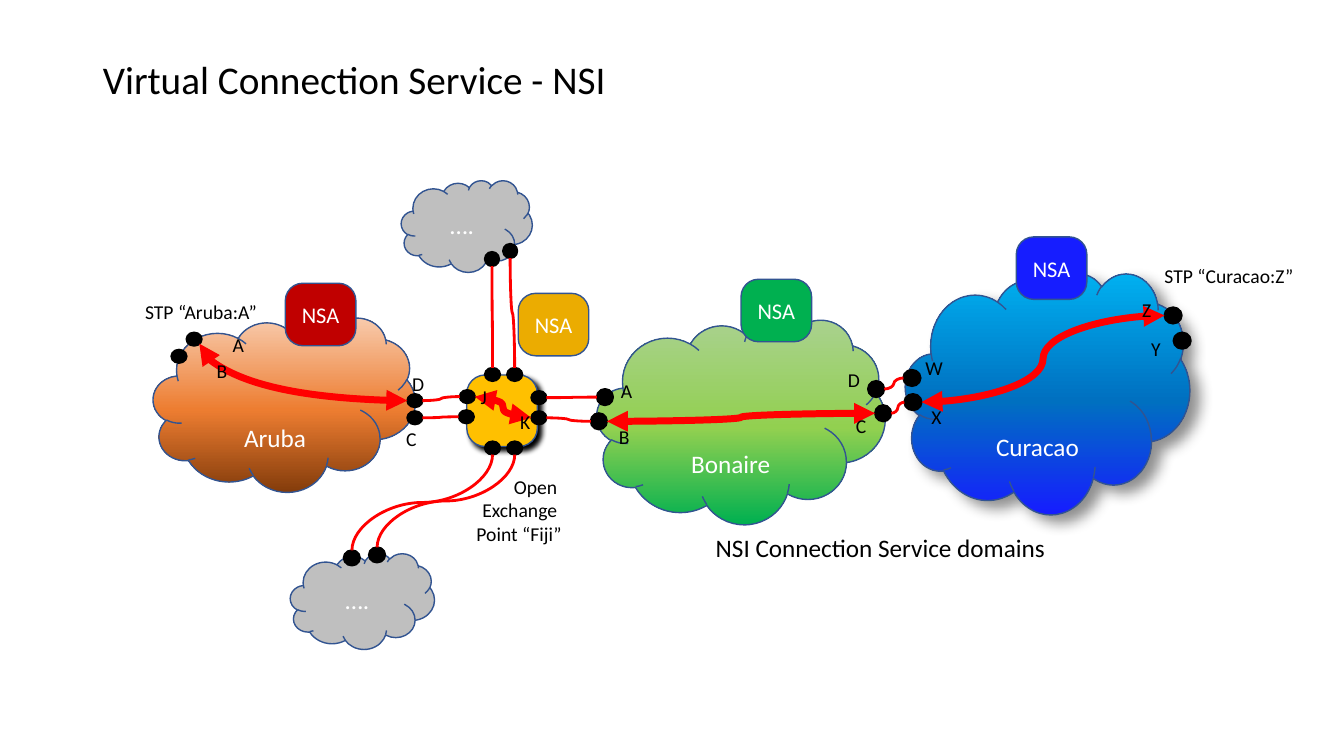
"""Build the Virtual Connection Service - NSI slide."""
import copy

import lxml.etree
import pptx
import pptx.dml.color
import pptx.enum.shapes
import pptx.enum.text
import pptx.oxml
import pptx.oxml.ns
import pptx.util

Inches, Pt = pptx.util.Inches, pptx.util.Pt
RGBColor = pptx.dml.color.RGBColor
SHAPE = pptx.enum.shapes.MSO_SHAPE
ALIGN = pptx.enum.text.PP_ALIGN
ANCHOR = pptx.enum.text.MSO_ANCHOR
qn = pptx.oxml.ns.qn

BLACK = RGBColor(0x00, 0x00, 0x00)
WHITE = RGBColor(0xFF, 0xFF, 0xFF)
RED = RGBColor(0xFF, 0x00, 0x00)
OUTLINE = RGBColor(0x32, 0x54, 0x91)
GREY = RGBColor(0xBF, 0xBF, 0xBF)
GREEN = RGBColor(0x00, 0xB0, 0x50)
LIME = RGBColor(0x92, 0xD0, 0x50)
PALE_GREEN = RGBColor(0xA9, 0xD1, 0x8E)
BLUE = RGBColor(0x16, 0x1D, 0xFF)
MID_BLUE = RGBColor(0x00, 0x70, 0xC0)
SKY = RGBColor(0x00, 0xB0, 0xF0)
BROWN = RGBColor(0x84, 0x3C, 0x0B)
ORANGE = RGBColor(0xED, 0x7D, 0x31)
PEACH = RGBColor(0xF8, 0xCB, 0xAD)
GOLD = RGBColor(0xFF, 0xC0, 0x00)
DARK_GOLD = RGBColor(0xEB, 0xAC, 0x01)
DARK_RED = RGBColor(0xC0, 0x00, 0x00)

TITLE = "Virtual Connection Service - NSI"

CLOUDS = [
    ("Bonaire", (5.92, 3.17, 2.86, 2.03), (GREEN, LIME, PALE_GREEN), None),
    ("Curacao", (8.98, 2.71, 2.82, 2.39), (BLUE, MID_BLUE, SKY), (43, 10, 8)),
    ("Aruba", (1.52, 3.15, 2.6, 1.73), (BROWN, ORANGE, PEACH), None),
    ("….", (2.88, 5.49, 1.43, 0.95), (GREY,), None),
    ("….", (3.98, 1.79, 1.3, 0.91), (GREY,), None),
]
EXCHANGE = (4.63, 3.72, 0.7, 0.71)

DOT_GROUPS = [
    ("Bonaire", (0.16, 0.16), {"B": (5.86, 4.1), "A": (5.92, 3.86),
                               "C": (8.68, 4.02), "D": (8.61, 3.78)}),
    ("Curacao", (0.17, 0.16), {"W": (8.96, 3.67), "X": (8.97, 3.91),
                               "Z": (11.55, 3.05), "Y": (11.64, 3.3)}),
    ("Aruba", (0.15, 0.13), {"A": (1.85, 3.3), "D": (4.04, 3.91),
                             "B": (1.7, 3.47), "C": (4.04, 4.08)}),
    ("South", (0.16, 0.15), {"right": (3.66, 5.43), "left": (3.41, 5.46)}),
    ("North", (0.14, 0.14), {"right": (4.99, 2.42), "left": (4.81, 2.5)}),
    ("Fiji", (0.15, 0.13), {"top left": (4.81, 3.65), "top right": (5.03, 3.65),
                            "J": (4.56, 3.87), "west": (4.55, 4.07),
                            "bottom left": (4.81, 4.38), "bottom right": (5.03, 4.38),
                            "east": (5.27, 3.88), "K": (5.27, 4.08)}),
]

SIDES = {"left": (0, 0.5), "right": (1, 0.5), "top": (0.5, 0),
         "bottom": (0.5, 1), "corner": (0.85, 0.85)}
LINKS = [
    ("Bonaire D", "right", "Curacao W", "left"),
    ("Bonaire C", "right", "Curacao X", "left"),
    ("Fiji bottom right", "bottom", "South right", "top"),
    ("Fiji bottom left", "bottom", "South left", "top"),
    ("North right", "bottom", "Fiji top right", "top"),
    ("North left", "bottom", "Fiji top left", "top"),
    ("Fiji east", "right", "Bonaire A", "left"),
    ("Fiji K", "right", "Bonaire B", "left"),
    ("Aruba D", "right", "Fiji J", "left"),
    ("Aruba C", "right", "Fiji west", "left"),
]
PATHS = [
    ("Curacao Z", "left", "Curacao X", "right"),
    ("Bonaire C", "left", "Bonaire B", "right"),
    ("Fiji K", "left", "Fiji J", "right"),
    ("Aruba D", "left", "Aruba A", "corner"),
]

LABELS = [
    ("STP “Aruba:A”", 1.34, 2.93, 1.32), ("A", 2.21, 3.25, 0.32),
    ("B", 2.05, 3.51, 0.31), ("C", 3.93, 4.19, 0.31), ("D", 3.99, 3.64, 0.32),
    ("STP “Curacao:Z”", 11.45, 2.57, 1.49), ("X", 9.14, 3.97, 0.3),
    ("Y", 11.32, 3.29, 0.3), ("Z", 11.23, 2.91, 0.29), ("W", 9.08, 3.48, 0.38),
    ("A", 6.06, 3.71, 0.32), ("B", 6.04, 4.17, 0.31), ("C", 8.39, 4.06, 0.31),
    ("D", 8.31, 3.6, 0.32), ("J", 4.67, 3.77, 0.27), ("K", 5.06, 4.02, 0.3),
]
AGENTS = [(10.08, 2.35, BLUE), (5.14, 2.91, DARK_GOLD),
          (2.83, 2.81, DARK_RED), (7.35, 2.77, GREEN)]

prs = pptx.Presentation()
prs.slide_width, prs.slide_height = Inches(13.33), Inches(7.5)
s = prs.slides.add_slide(prs.slide_layouts[5])


def write(sp, text, size=14, color=BLACK, align=ALIGN.LEFT, anchor=ANCHOR.TOP,
          wrap=True, spacing=None):
    tf = sp.text_frame
    tf.word_wrap, tf.vertical_anchor = wrap, anchor
    for i, line in enumerate(text.split("\n")):
        p = tf.add_paragraph() if i else tf.paragraphs[0]
        p.alignment, p.line_spacing = align, spacing
        r = p.add_run()
        r.text = line
        r.font.name, r.font.size, r.font.color.rgb = "Calibri", Pt(size), color


def add_text(text, box, **fmt):
    sp = s.shapes.add_textbox(*map(Inches, box))
    write(sp, text, wrap=False, **fmt)
    sp.text_frame.auto_size = pptx.enum.text.MSO_AUTO_SIZE.SHAPE_TO_FIT_TEXT


def add_shape(kind, box, colors, line=OUTLINE, weight=1, radius=None, shadow=None):
    sp = s.shapes.add_shape(kind, *map(Inches, box))
    sp.shadow.inherit = False
    if len(colors) == 1:
        sp.fill.solid()
        sp.fill.fore_color.rgb = colors[0]
    else:
        sp.fill.gradient()
        sp.fill.gradient_angle = 90
        first = sp._element.spPr.find(".//" + qn("a:gs"))
        first.addnext(copy.deepcopy(first))
        for stop, color, pos in zip(sp.fill.gradient_stops, colors, (0, 0.47, 1)):
            stop.color.rgb, stop.position = color, pos
    sp.line.color.rgb, sp.line.width = line, Pt(weight)
    if radius:
        sp.adjustments[0] = radius
    if shadow:
        alpha, blur, dist = shadow
        sp._element.spPr.find(qn("a:effectLst")).append(pptx.oxml.parse_xml(
            f'<a:outerShdw {pptx.oxml.ns.nsdecls("a")} blurRad="{Pt(blur)}" '
            f'dist="{Pt(dist)}" dir="{40 * 60000}" algn="tl" rotWithShape="0">'
            f'<a:srgbClr val="{BLACK}"><a:alpha val="{alpha * 1000}"/></a:srgbClr>'
            '</a:outerShdw>'))
    return sp


def add_curve(start, start_side, end, end_side, weight=2, arrows=False):
    (x1, y1), (x2, y2) = [
        (x + w * SIDES[side][0], y + h * SIDES[side][1])
        for (x, y, w, h), side in ((dots[start], start_side), (dots[end], end_side))]
    vertical = start_side == "bottom"
    if vertical:
        cx, cy, dx, dy = (x1 + x2) / 2, (y1 + y2) / 2, x1 - x2, y2 - y1
        x1, y1, x2, y2 = cx - dy / 2, cy - dx / 2, cx + dy / 2, cy + dx / 2
    c = s.shapes.add_connector(pptx.enum.shapes.MSO_CONNECTOR.CURVE,
                               *map(Inches, (x1, y1, x2, y2)))
    spPr = c._element.spPr
    if vertical:
        spPr.find(qn("a:xfrm")).set("rot", str(90 * 60000))
    if end_side == "corner":
        spPr.find(qn("a:prstGeom")).set("prst", "curvedConnector2")
    c.line.color.rgb, c.line.width = RED, Pt(weight)
    if arrows:
        for tag in ("a:headEnd", "a:tailEnd"):
            lxml.etree.SubElement(spPr.find(qn("a:ln")), qn(tag), type="triangle")
    lxml.etree.SubElement(spPr, qn("a:effectLst"))


title = s.shapes.title
title.left, title.top, title.width, title.height = map(Inches, (0.92, 0.4, 11.5, 0.83))
write(title, TITLE, size=28, anchor=ANCHOR.MIDDLE, spacing=0.9)

for name, box, colors, shadow in CLOUDS:
    cloud = add_shape(SHAPE.CLOUD, box, colors, shadow=shadow)
    write(cloud, name, size=18, color=WHITE, align=ALIGN.CENTER,
          anchor=ANCHOR.MIDDLE if len(colors) == 1 else ANCHOR.BOTTOM)
add_shape(SHAPE.ROUNDED_RECTANGLE, EXCHANGE, (GOLD,), radius=0.26, shadow=(100, 4, 4))

dots = {f"{group} {name}": pos + size
        for group, size, places in DOT_GROUPS for name, pos in places.items()}
for box in dots.values():
    add_shape(SHAPE.OVAL, box, (BLACK,), line=BLACK, weight=1.5)
for link in LINKS:
    add_curve(*link)
for route in PATHS:
    add_curve(*route, weight=5, arrows=True)

for text, x, y, w in LABELS:
    add_text(text, (x, y, w, 0.34))
add_text("NSI Connection Service domains", (7, 5.23, 3.51, 0.4), size=18)
add_text("Open \nExchange \nPoint “Fiji”", (4.61, 4.66, 1.06, 0.81), align=ALIGN.RIGHT)
for x, y, color in AGENTS:
    agent = add_shape(SHAPE.ROUNDED_RECTANGLE, (x, y, 0.7, 0.62), (color,), radius=0.28)
    write(agent, "NSA", size=16, color=WHITE, align=ALIGN.CENTER, anchor=ANCHOR.MIDDLE)

prs.save("out.pptx")
